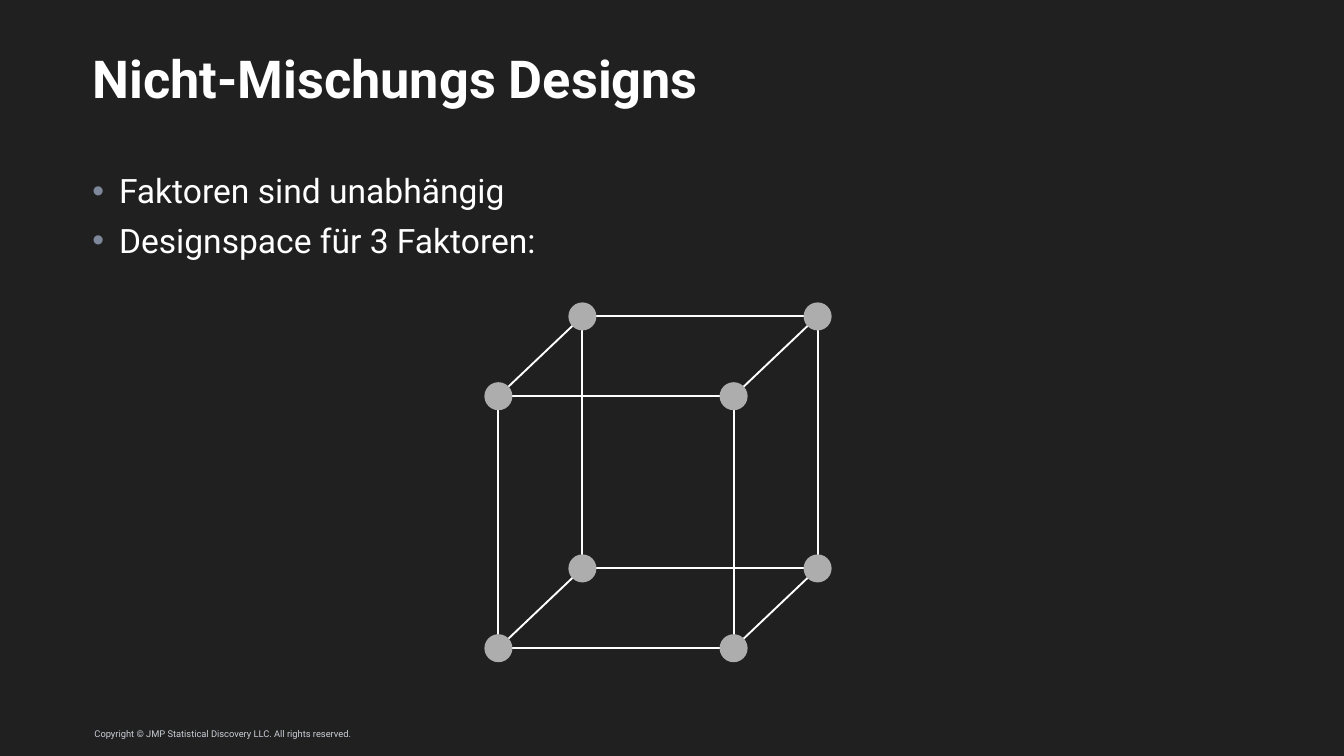
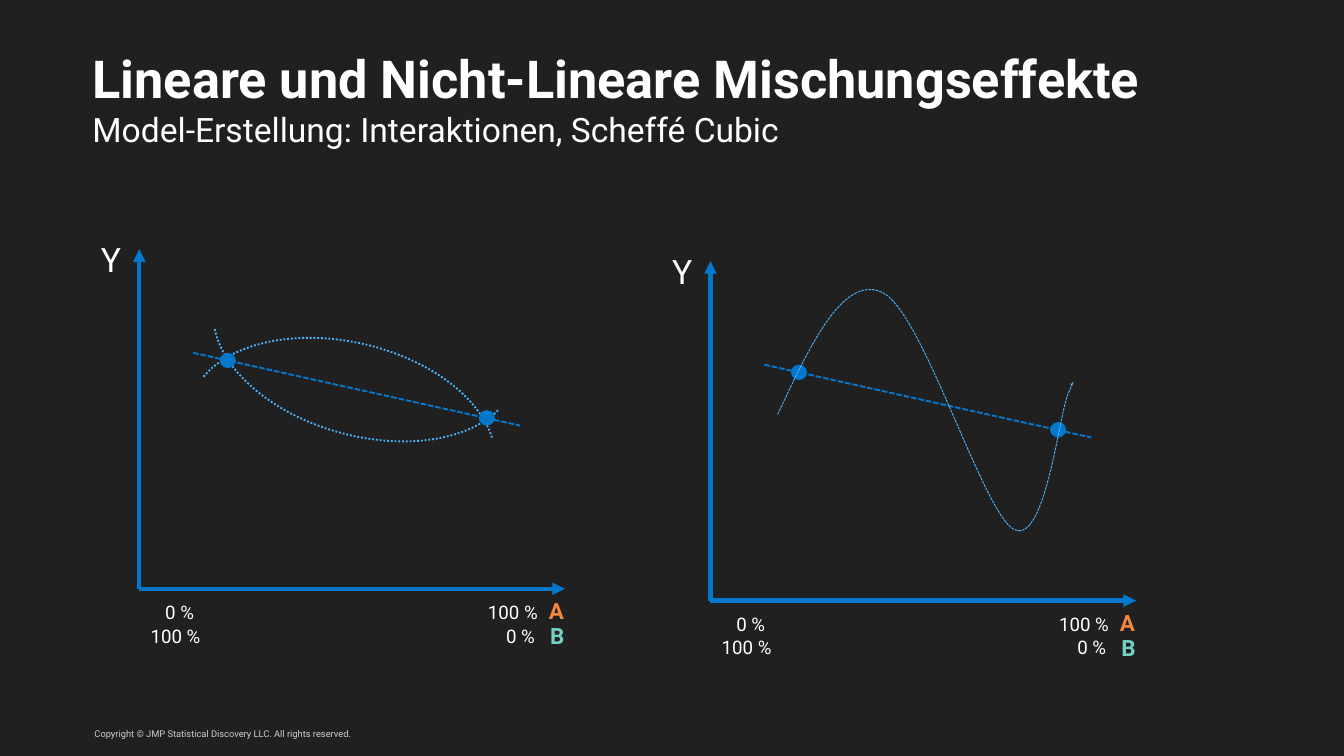
from itertools import combinations, product
from math import hypot

from pptx import Presentation
from pptx.dml.color import RGBColor
from pptx.enum.dml import MSO_LINE
from pptx.enum.shapes import MSO_CONNECTOR, MSO_SHAPE
from pptx.enum.text import MSO_ANCHOR, MSO_AUTO_SIZE, PP_ALIGN
from pptx.oxml.ns import qn
from pptx.util import Pt
from lxml import etree

STRAIGHT = MSO_CONNECTOR.STRAIGHT
OVAL, ARC = MSO_SHAPE.OVAL, MSO_SHAPE.ARC
DOTTED, DASHED = MSO_LINE.ROUND_DOT, MSO_LINE.SQUARE_DOT
TOP, MIDDLE, BOTTOM = MSO_ANCHOR.TOP, MSO_ANCHOR.MIDDLE, MSO_ANCHOR.BOTTOM
LEFT = PP_ALIGN.LEFT
NO_FIT = MSO_AUTO_SIZE.NONE

DARK = RGBColor(0x20, 0x20, 0x20)
WHITE = RGBColor(0xFF, 0xFF, 0xFF)
FOOTER_GRAY = RGBColor(0xCB, 0xCF, 0xD7)
BULLET_GRAY = RGBColor(0x7E, 0x88, 0x9A)
NODE_GRAY = RGBColor(0xAD, 0xAD, 0xAD)
BLUE = RGBColor(0x03, 0x78, 0xCD)
LIGHT_BLUE = RGBColor(0x4C, 0xB2, 0xFC)
ORANGE = RGBColor(0xF4, 0x86, 0x3D)
TEAL = RGBColor(0x73, 0xD0, 0xC3)

FONT = "Roboto"
PX = 9525
MARGIN, CONTENT_W = 132, 1656


def px(*values):
    return [round(v * PX) for v in values]


def format_text(tf, size, color=WHITE, bold=False, anchor=TOP, wrap=True):
    tf.auto_size = NO_FIT
    tf.word_wrap = wrap
    tf.vertical_anchor = anchor
    tf.margin_left = tf.margin_top = tf.margin_right = tf.margin_bottom = 0
    for p in tf.paragraphs:
        p.alignment = LEFT
        for r in p.runs:
            r.font.name = FONT
            r.font.size = Pt(size)
            r.font.bold = bold
            r.font.color.rgb = color


def add_text(s, box, text, size, **style):
    tb = s.shapes.add_textbox(*px(*box))
    tb.text_frame.text = text
    format_text(tb.text_frame, size, **style)
    return tb.text_frame


def style_line(sp, color, width, dash=None):
    sp.line.color.rgb = color
    sp.line.width = Pt(width)
    if dash:
        sp.line.dash_style = dash


def add_line(shapes, start, end, color, width, dash=None, arrow=False):
    c = shapes.add_connector(STRAIGHT, *px(*start, *end))
    style_line(c, color, width, dash)
    spPr = c._element.spPr
    if arrow:
        etree.SubElement(spPr.find(qn("a:ln")), qn("a:tailEnd"), type="triangle")
    etree.SubElement(spPr, qn("a:effectLst"))


def add_dot(shapes, box, color):
    sp = shapes.add_shape(OVAL, *px(*box))
    sp.shadow.inherit = False
    sp.fill.solid()
    sp.fill.fore_color.rgb = color
    sp.line.fill.background()
    return sp


def set_bullet(p, bulleted):
    pPr = p._p.get_or_add_pPr()
    indent = px(38)[0] if bulleted else 0
    pPr.set("marL", str(indent))
    pPr.set("indent", str(-indent))
    if bulleted:
        clr = etree.SubElement(pPr, qn("a:buClr"))
        etree.SubElement(clr, qn("a:srgbClr"), val=str(BULLET_GRAY))
        etree.SubElement(pPr, qn("a:buFont"), typeface="Arial")
        etree.SubElement(pPr, qn("a:buChar"), char="•")
    else:
        etree.SubElement(pPr, qn("a:buNone"))


def place(ph, box):
    ph.left, ph.top, ph.width, ph.height = px(*box)


def add_base_slide(prs, title, lines, body_top, body_height, bulleted):
    s = prs.slides.add_slide(prs.slide_layouts[1])
    tf = add_text(s, (MARGIN, 1035, 528, 26),
                  "Copyright © JMP Statistical Discovery LLC. All rights reserved.",
                  10, color=FOOTER_GRAY, anchor=BOTTOM)
    tf.margin_left, tf.margin_bottom = px(3, 5)

    head = s.shapes.title
    place(head, (MARGIN, 75, CONTENT_W, 82))
    head.text_frame.text = title
    head.text_frame.paragraphs[0].line_spacing = 0.9
    format_text(head.text_frame, 56, bold=True, anchor=MIDDLE)

    body = s.placeholders[1]
    place(body, (MARGIN, body_top, CONTENT_W, body_height))
    body.text_frame.text = "\n".join(lines)
    for i, p in enumerate(body.text_frame.paragraphs):
        set_bullet(p, bulleted)
        p.line_spacing = 0.85
        p.space_before = Pt(16 if i else 0)
    format_text(body.text_frame, 36)
    return s


def add_cube(s, left, top):
    radius, width, height, depth_x, depth_y = 18, 336, 360, 120, 114
    shapes = s.shapes.add_group_shape().shapes
    corners = {
        (x, y, z): (left + radius + x * width + z * depth_x,
                    top + radius + y * height + (1 - z) * depth_y)
        for x, y, z in product((0, 1), repeat=3)
    }
    for a, b in combinations(corners, 2):
        if sum(i != j for i, j in zip(a, b)) == 1:
            (ax, ay), (bx, by) = corners[a], corners[b]
            trim = radius / hypot(bx - ax, by - ay)
            dx, dy = (bx - ax) * trim, (by - ay) * trim
            add_line(shapes, (ax + dx, ay + dy), (bx - dx, by - dy), WHITE, 2)
    for x, y in corners.values():
        node = add_dot(shapes, (x - radius, y - radius, 2 * radius, 2 * radius), NODE_GRAY)
        style_line(node, NODE_GRAY, 3)


def add_mixture_chart(s, left, top):
    def at(x, y):
        return left + x, top + y

    origin = at(55, 500)
    add_line(s.shapes, origin, at(663, 500), BLUE, 4.5, arrow=True)
    add_line(s.shapes, origin, at(55, 15), BLUE, 4.5, arrow=True)
    for x, y in ((170, 163), (540, 245)):
        add_dot(s.shapes, (*at(x, y), 23, 22), BLUE)
    add_line(s.shapes, at(132, 163), at(599, 267), BLUE, 2, DASHED)

    labels = [
        (92, 517, 56, 33, "0 %", 20, WHITE, False),
        (553, 518, 77, 33, "100 %", 20, WHITE, False),
        (71, 551, 77, 33, "100 %", 20, WHITE, False),
        (579, 551, 56, 33, "0 %", 20, WHITE, False),
        (640, 512, 23, 38, "A", 24, ORANGE, True),
        (642, 548, 20, 38, "B", 24, TEAL, True),
        (0, 0, 32, 59, "Y", 36, WHITE, False),
    ]
    for x, y, w, h, text, size, color, bold in labels:
        add_text(s, (*at(x, y), w, h), text, size, color=color, bold=bold, wrap=False)


def add_interaction_arcs(s, left, top):
    for x, y, rotation, flipped in ((156, 10, 15.2, True), (123, 147, 12.7, False)):
        arc = s.shapes.add_shape(ARC, *px(left + x, top + y, 444, 272))
        arc.shadow.inherit = False
        arc.adjustments[0], arc.adjustments[1] = 114.43, 208.74
        arc.rotation = rotation
        if flipped:
            arc._element.spPr.xfrm.set("flipV", "1")
        arc.fill.background()
        style_line(arc, LIGHT_BLUE, 2, DOTTED)


def bezier(points, steps=24):
    for i in range(1, steps + 1):
        t = i / steps
        weights = ((1 - t) ** 3, 3 * t * (1 - t) ** 2, 3 * t ** 2 * (1 - t), t ** 3)
        yield [sum(w * p[axis] for w, p in zip(weights, points)) for axis in (0, 1)]


def add_cubic_curve(s, left, top):
    knots = [(151, 234), (198, 134), (245, 33), (301, 60), (358, 87), (444, 374),
             (488, 398), (532, 423), (552, 242), (565, 207), (579, 174), (570, 196),
             (571, 193), (571, 190), (568, 190), (568, 190)]
    knots = [(left + x, top + y) for x, y in knots]
    builder = s.shapes.build_freeform(*px(*knots[0]))
    for i in range(0, len(knots) - 1, 3):
        builder.add_line_segments([px(*p) for p in bezier(knots[i:i + 4])], close=False)
    curve = builder.convert_to_shape()
    curve.shadow.inherit = False
    curve.fill.background()
    style_line(curve, LIGHT_BLUE, 1, DASHED)


def build_design_slide(prs):
    s = add_base_slide(prs, "Nicht-Mischungs Designs",
                       ["Faktoren sind unabhängig", "Designspace für 3 Faktoren:"],
                       252, 721, True)
    add_cube(s, 694, 434)


def build_effects_slide(prs):
    s = add_base_slide(prs, "Lineare und Nicht-Lineare Mischungseffekte",
                       ["Model-Erstellung: Interaktionen, Scheffé Cubic"],
                       164, 58, False)
    interaction, cubic = (144, 341), (960, 358)
    add_interaction_arcs(s, *interaction)
    add_mixture_chart(s, *interaction)
    add_mixture_chart(s, *cubic)
    add_cubic_curve(s, *cubic)


def main():
    prs = Presentation()
    prs.slide_width, prs.slide_height = px(1920, 1080)
    fill = prs.slide_master.background.fill
    fill.solid()
    fill.fore_color.rgb = DARK
    build_design_slide(prs)
    build_effects_slide(prs)
    prs.save("out.pptx")


if __name__ == "__main__":
    main()
